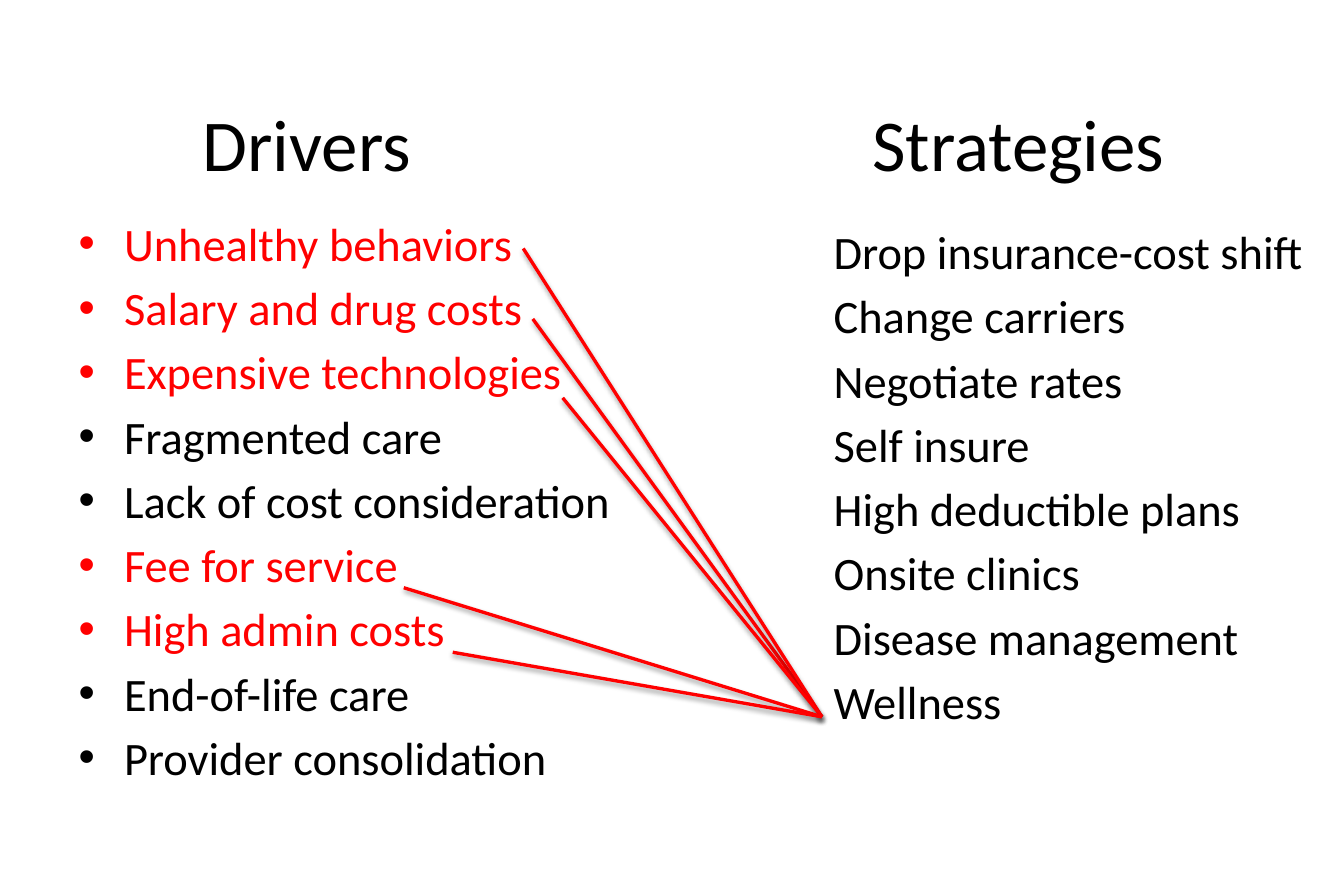
from lxml import etree
from pptx import Presentation
from pptx.dml.color import RGBColor
from pptx.enum import shapes, text
from pptx.oxml import parse_xml
from pptx.oxml.ns import nsdecls, qn
from pptx.util import Inches, Pt

BLACK = RGBColor(0x00, 0x00, 0x00)
RED = RGBColor(0xFF, 0x00, 0x00)
FONT = "Calibri"

DRIVERS = [
    ("Unhealthy behaviors", RED),
    ("Salary and drug costs", RED),
    ("Expensive technologies", RED),
    ("Fragmented care", BLACK),
    ("Lack of cost consideration", BLACK),
    ("Fee for service", RED),
    ("High admin costs", RED),
    ("End-of-life care", BLACK),
    ("Provider consolidation", BLACK),
]
STRATEGIES = [(name, BLACK) for name in (
    "Drop insurance-cost shift", "Change carriers", "Negotiate rates",
    "Self insure", "High deductible plans", "Onsite clinics",
    "Disease management", "Wellness")]

WELLNESS = (6.88, 6)
DRIVER_ENDS = [(4.46, 2.67), (4.38, 2.08), (4.71, 3.33), (3.38, 4.92), (3.79, 5.46)]

SHADOW = (
    f'<a:effectLst {nsdecls("a")}>'
    f'<a:outerShdw blurRad="{Pt(3.1)}" dist="{Pt(1.6)}" dir="5400000" rotWithShape="0">'
    '<a:srgbClr val="000000"><a:alpha val="38000"/></a:srgbClr>'
    '</a:outerShdw></a:effectLst>')


def add_text_frame(slide, box):
    tf = slide.shapes.add_textbox(*map(Inches, box)).text_frame
    tf.word_wrap = True
    return tf


def add_run(p, words, size, color):
    r = p.add_run()
    r.text = words
    r.font.name = FONT
    r.font.size = Pt(size)
    r.font.color.rgb = color


def add_heading(slide, box, words):
    tf = add_text_frame(slide, box)
    tf.vertical_anchor = text.MSO_ANCHOR.MIDDLE
    p = tf.paragraphs[0]
    p.alignment = text.PP_ALIGN.CENTER
    add_run(p, words, 44, BLACK)


def add_bullet(p):
    pPr = p._p.get_or_add_pPr()
    pPr.set("marL", str(Inches(0.38)))
    pPr.set("indent", str(Inches(-0.38)))
    etree.SubElement(pPr, qn("a:buFont")).set("typeface", "Arial")
    etree.SubElement(pPr, qn("a:buChar")).set("char", "•")


def add_list(slide, box, items, bulleted=False):
    tf = add_text_frame(slide, box)
    for i, (words, color) in enumerate(items):
        p = tf.add_paragraph() if i else tf.paragraphs[0]
        if bulleted:
            add_bullet(p)
        if i:
            p.space_before = Pt(5.1)
        add_run(p, words, 28, color)


def add_links(slide, start, ends):
    """Draw a shadowed red line from start to each of the ends."""
    for end in ends:
        line = slide.shapes.add_connector(
            shapes.MSO_CONNECTOR.STRAIGHT, *map(Inches, start + end))
        line.line.color.rgb = RED
        line.line.width = Pt(2)
        line._element.spPr.append(parse_xml(SHADOW))


def main():
    prs = Presentation()
    prs.slide_width, prs.slide_height = Inches(11.25), Inches(7.5)
    slide = prs.slides.add_slide(prs.slide_layouts[6])
    add_heading(slide, (1.29, 0.55, 2.56, 1.28), "Drivers")
    add_list(slide, (0.56, 1.75, 10.12, 4.95), DRIVERS, bulleted=True)
    add_list(slide, (6.88, 1.82, 4.24, 5), STRATEGIES)
    add_heading(slide, (7.12, 0.55, 2.81, 1.28), "Strategies")
    add_links(slide, WELLNESS, DRIVER_ENDS)
    prs.save("out.pptx")


if __name__ == "__main__":
    main()
